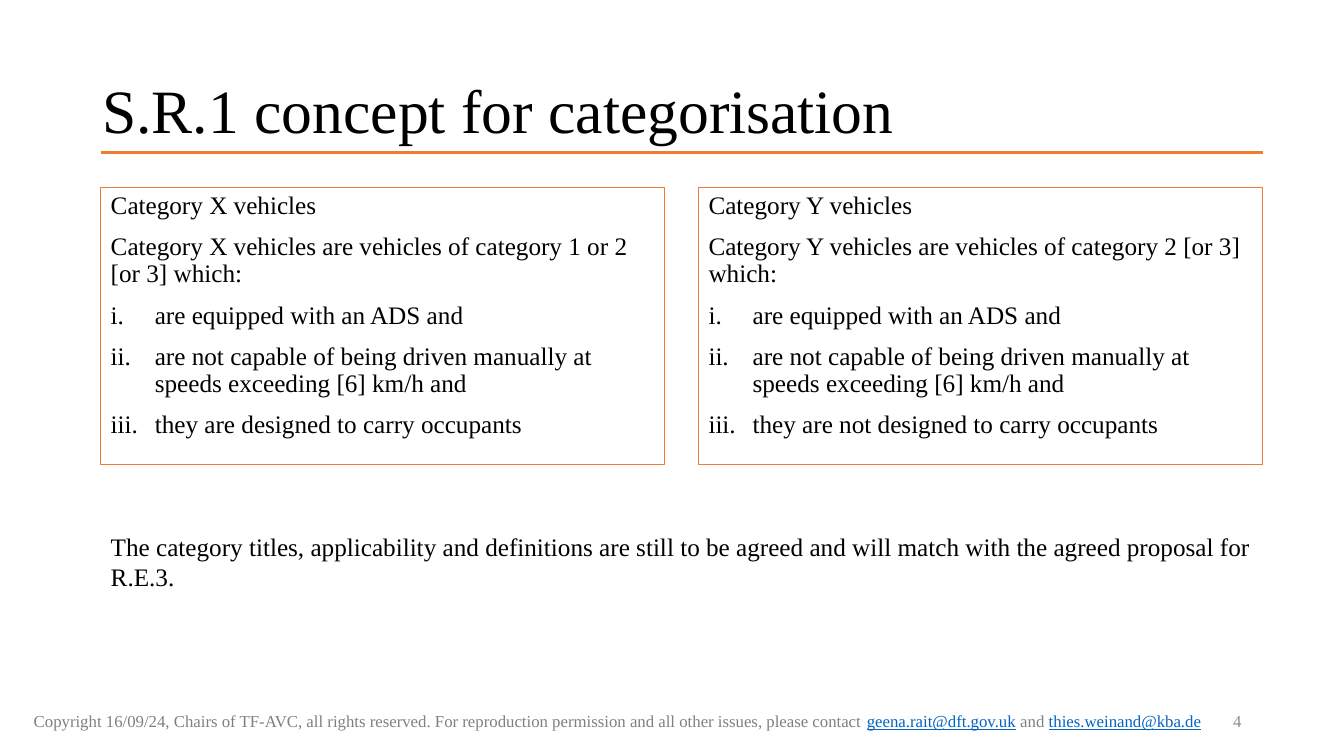
from lxml import etree
from pptx import Presentation
from pptx.dml.color import RGBColor
from pptx.enum.shapes import MSO_CONNECTOR, MSO_SHAPE
from pptx.enum.text import MSO_ANCHOR, PP_ALIGN
from pptx.oxml.ns import qn
from pptx.util import Pt

LEFT, RIGHT = PP_ALIGN.LEFT, PP_ALIGN.RIGHT
TOP, MID = MSO_ANCHOR.TOP, MSO_ANCHOR.MIDDLE
RECT, LINE = MSO_SHAPE.RECTANGLE, MSO_CONNECTOR.STRAIGHT
HUES = {"text": "000000", "rule": "ED7D31", "foot": "808080",
        "page": "8C8C8C", "mail": "0563C1"}


def hue(name):
    return RGBColor.from_string(HUES[name])


def write(shape, paras, size, anchor=TOP, align=LEFT, **form):
    """Fill a shape with paragraphs, each a list of (text, colour) runs."""
    frame = shape.text_frame
    frame.word_wrap = True
    frame.vertical_anchor = anchor
    for i, runs in enumerate(paras):
        para = frame.paragraphs[0] if i == 0 else frame.add_paragraph()
        para.alignment = align
        for key, value in form.items():
            setattr(para, key, value)
        for text, tint in runs:
            run = para.add_run()
            run.text = text
            run.font.name = "Times New Roman"
            run.font.size = Pt(size)
            run.font.color.rgb = hue(tint)
            if tint == "mail":
                run.font.underline = True


deck = Presentation()
deck.slide_width, deck.slide_height = Pt(960), Pt(540)
slide = deck.slides.add_slide(deck.slide_layouts[6])
shapes = slide.shapes

# Title and rule
title = shapes.add_textbox(Pt(66), Pt(29), Pt(828), Pt(104))
write(title, [[("S.R.1 concept for categorisation", "text")]], 44, MID,
      line_spacing=0.9)
rule = shapes.add_connector(LINE, Pt(72), Pt(109), Pt(902), Pt(109))
rule.line.color.rgb = hue("rule")
rule.line.width = Pt(2.25)
etree.SubElement(rule.element.spPr, qn("a:effectLst"))

# Category boxes
cats = [("X", "1 or 2 [or 3]", "are"), ("Y", "2 [or 3]", "are not")]
for i, (cat, base, verb) in enumerate(cats):
    box = shapes.add_shape(RECT, Pt(72 + 427 * i), Pt(134), Pt(403), Pt(198))
    box.shadow.inherit = False
    box.fill.background()
    box.line.color.rgb = hue("rule")
    box.line.width = Pt(0.75)
    lines = [
        f"Category {cat} vehicles",
        f"Category {cat} vehicles are vehicles of category {base} which:",
        "are equipped with an ADS and",
        "are not capable of being driven manually at speeds exceeding [6] km/h and",
        f"they {verb} designed to carry occupants",
    ]
    write(box, [[(line, "text")] for line in lines], 18,
          line_spacing=0.9, space_before=Pt(10))
    # Roman numerals on the conditions
    for para in box.text_frame.paragraphs[2:]:
        props = para._p.get_or_add_pPr()
        props.set("marL", str(Pt(31.5)))
        props.set("indent", str(-Pt(31.5)))
        etree.SubElement(props, qn("a:buFont"), typeface="+mj-lt")
        etree.SubElement(props, qn("a:buAutoNum"), type="romanLcPeriod")

# Remark
note = shapes.add_textbox(Pt(72), Pt(376), Pt(830), Pt(51))
write(note, [[("The category titles, applicability and definitions are still to be "
               "agreed and will match with the agreed proposal for R.E.3.", "text")]], 18)

# Footer and page number
foot = shapes.add_textbox(Pt(17), Pt(504), Pt(858), Pt(22))
write(foot, [[("Copyright 16/09/24, Chairs of TF-AVC, all rights reserved. For reproduction "
               "permission and all other issues, please contact ", "foot"),
              ("geena.rait@dft.gov.uk", "mail"), (" and ", "foot"),
              ("thies.weinand@kba.de", "mail")]], 12)
page = shapes.add_textbox(Pt(678), Pt(500.5), Pt(216), Pt(29))
write(page, [[("4", "page")]], 12, MID, RIGHT)

deck.save("out.pptx")
